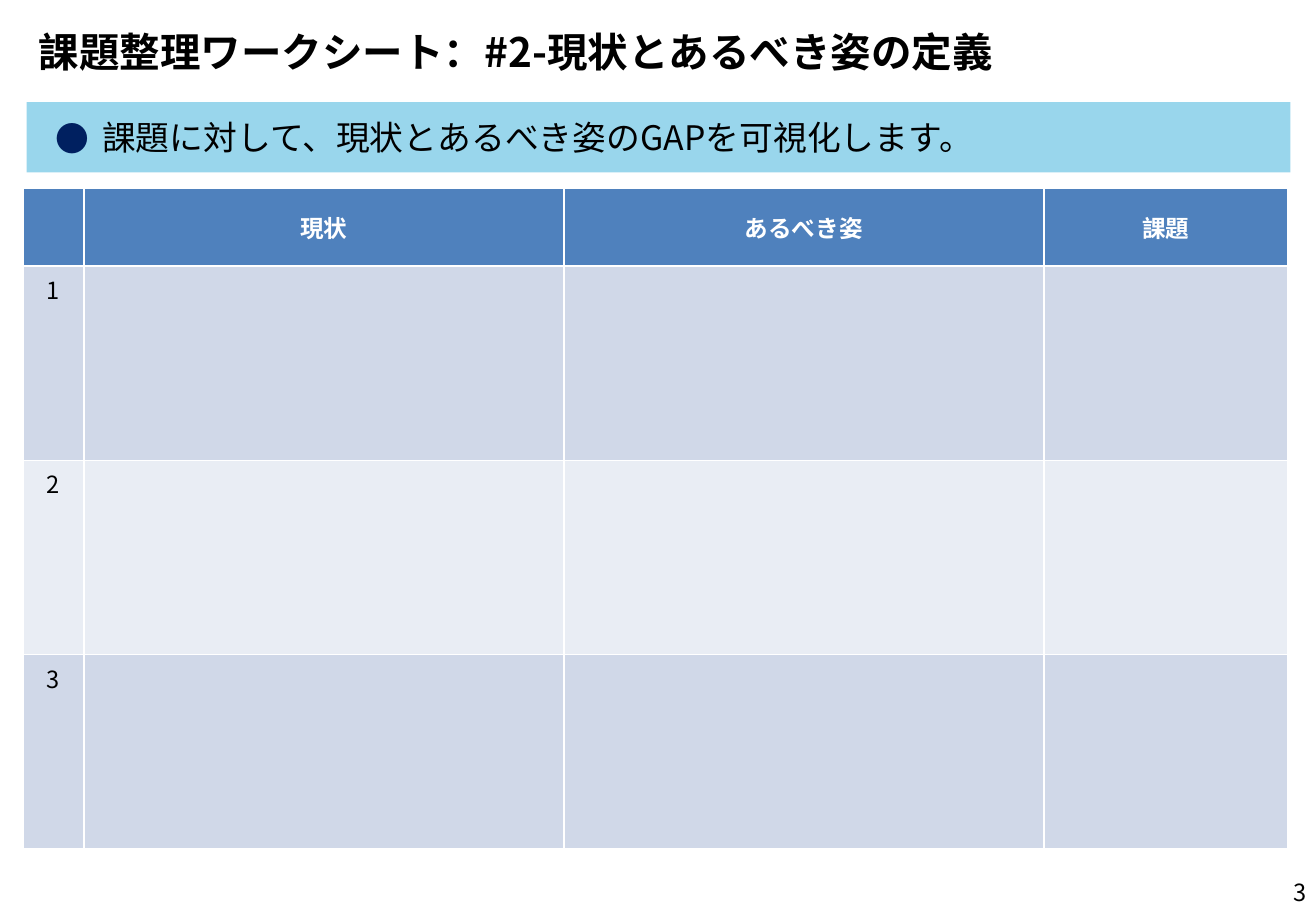
import pptx
import pptx.util
import pptx.dml.color
import pptx.enum.text
import pptx.oxml
import pptx.oxml.ns

TITLE = "課題整理ワークシート：#2-現状とあるべき姿の定義"
LEAD = "課題に対して、現状とあるべき姿のGAPを可視化します。"
PAGE = "3"
ROWS = [
    ("", "現状", "あるべき姿", "課題"),
    ("1", "", "", ""),
    ("2", "", "", ""),
    ("3", "", "", ""),
]
COLS = (0.5, 3.95, 3.95, 2.01)
HEAD_H, ROW_H = 0.64, 1.6
LEFT, WIDTH = 0.22, 10.4
FONT = "Noto Sans CJK JP"
BLACK, WHITE, NAVY, SKY = "000000", "FFFFFF", "002060", "99D6EC"
HEAD, BANDS = "4F81BD", ("D0D8E8", "E9EDF4")

inch, Pt = pptx.util.Inches, pptx.util.Pt
ALIGN, ANCHOR = pptx.enum.text.PP_ALIGN, pptx.enum.text.MSO_ANCHOR


def rgb(code):
    return pptx.dml.color.RGBColor.from_string(code)


def paint(shape, code):
    shape.fill.solid()
    shape.fill.fore_color.rgb = rgb(code)


def add_xml(parent, tag, **attrs):
    node = pptx.oxml.parse_xml(f"<a:{tag} {pptx.oxml.ns.nsdecls('a')}/>")
    for name, value in attrs.items():
        node.set(name, value)
    parent.append(node)
    return node


def write(frame, text, size, color=BLACK, bold=False, align=ALIGN.LEFT):
    frame.text = text
    par = frame.paragraphs[0]
    par.alignment = align
    for run in par.runs:
        font = run.font
        font.size, font.bold, font.name = Pt(size), bold, FONT
        font.color.rgb = rgb(color)
        add_xml(run._r.get_or_add_rPr(), "ea", typeface=FONT)
    return par


def place(shape, left, top, width, height):
    shape.left, shape.top = inch(left), inch(top)
    shape.width, shape.height = inch(width), inch(height)
    frame = shape.text_frame
    frame.word_wrap = True
    frame.auto_size = pptx.enum.text.MSO_AUTO_SIZE.NONE
    frame.vertical_anchor = ANCHOR.MIDDLE
    return frame


deck = pptx.Presentation()
deck.slide_width, deck.slide_height = inch(10.83), inch(7.5)
slide = deck.slides.add_slide(deck.slide_layouts[1])
title, body = slide.placeholders

write(place(title, LEFT, 0.17, WIDTH, 0.5), TITLE, 24, bold=True)

frame = place(body, LEFT, 0.84, WIDTH, 0.58)
paint(body, SKY)
frame.margin_left = frame.margin_right = inch(0.24)
frame.margin_top = frame.margin_bottom = inch(0.12)
par = write(frame, LEAD, 20)
par.space_before = par.space_after = Pt(6)
props = par._p.get_or_add_pPr()
props.set("marL", str(inch(0.38)))
props.set("indent", str(-inch(0.38)))
add_xml(add_xml(props, "buClr"), "srgbClr", val=NAVY)
add_xml(props, "buFont", typeface=FONT)
add_xml(props, "buChar", char="●")

table = slide.shapes.add_table(
    len(ROWS), len(COLS), inch(0.19), inch(1.55), inch(sum(COLS)),
    inch(HEAD_H + ROW_H * (len(ROWS) - 1))).table
for col, width in zip(table.columns, COLS):
    col.width = inch(width)
for r, row in enumerate(ROWS):
    head = r == 0
    table.rows[r].height = inch(HEAD_H if head else ROW_H)
    for c, text in enumerate(row):
        cell = table.cell(r, c)
        paint(cell, HEAD if head else BANDS[(r - 1) % 2])
        cell.vertical_anchor = ANCHOR.MIDDLE if head else ANCHOR.TOP
        write(cell.text_frame, text, 14, WHITE if head else BLACK, head,
              ALIGN.CENTER)

number = slide.shapes.add_textbox(0, 0, 0, 0)
write(place(number, 8.32, 7.14, 2.53, 0.4), PAGE, 14, align=ALIGN.RIGHT)

deck.save("out.pptx")
